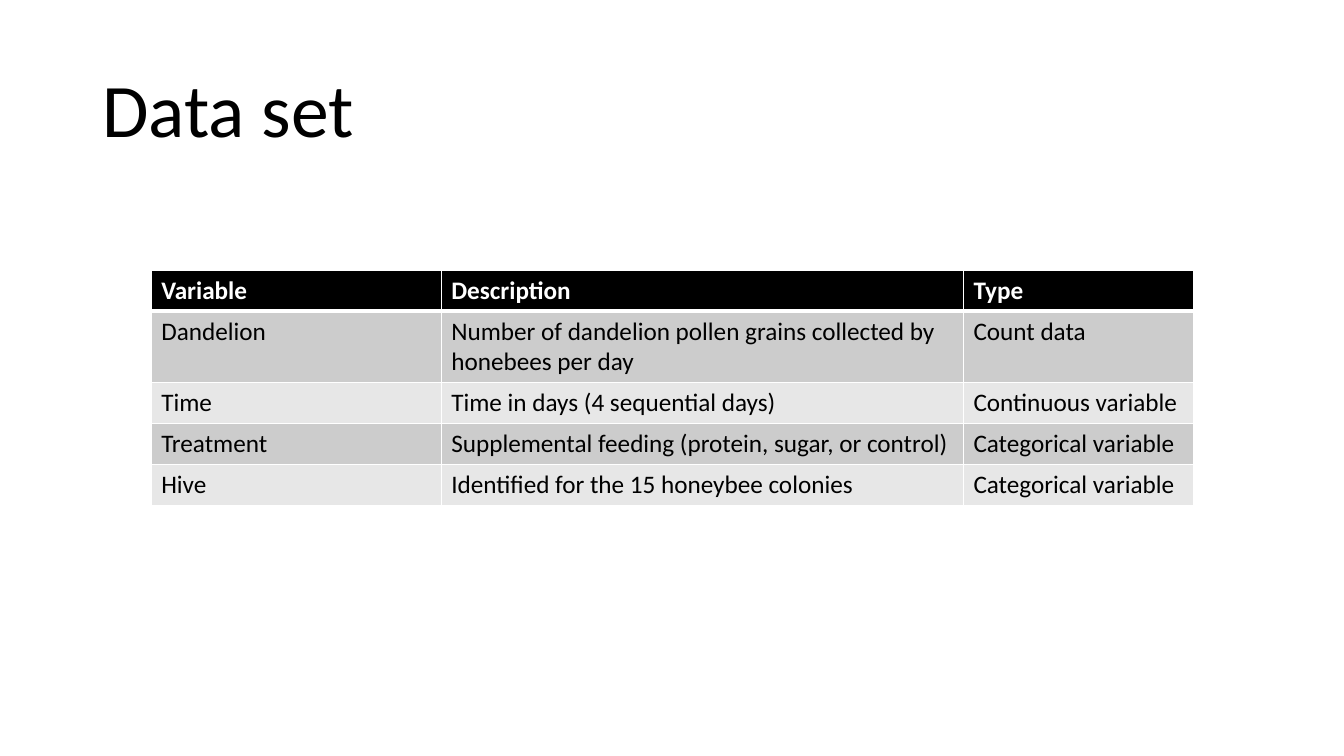
import pptx
import pptx.dml.color
import pptx.enum.text
import pptx.oxml
import pptx.oxml.ns
import pptx.util

Pt = pptx.util.Pt
COLORS = {"ink": "000000", "paper": "FFFFFF", "odd": "CCCCCC", "even": "E7E7E7"}
ROWS = [
    ("Variable", "Description", "Type"),
    ("Dandelion", "Number of dandelion pollen grains collected by honebees per day",
     "Count data"),
    ("Time", "Time in days (4 sequential days)", "Continuous variable"),
    ("Treatment", "Supplemental feeding (protein, sugar, or control)",
     "Categorical variable"),
    ("Hive", "Identified for the 15 honeybee colonies", "Categorical variable"),
]
WIDTHS = (207.2, 373, 164.2)
HEIGHTS = (29.2, 51.2, 29.2, 29.2, 29.2)


def rgb(name):
    return pptx.dml.color.RGBColor.from_string(COLORS[name])


class Page:
    def __init__(self, deck, font):
        self.slide = deck.slides.add_slide(deck.slide_layouts[6])
        self.font = font

    def label(self, para, text, color, **format):
        run = para.add_run()
        run.text = text
        run.font.color.rgb = rgb(color)
        for key, value in {"name": self.font, **format}.items():
            setattr(run.font, key, value)

    def title(self, text, box):
        frame = self.slide.shapes.add_textbox(*map(Pt, box)).text_frame
        frame.word_wrap = True
        frame.vertical_anchor = pptx.enum.text.MSO_ANCHOR.MIDDLE
        para = frame.paragraphs[0]
        para.line_spacing = 0.9
        self.label(para, text, "ink", size=Pt(54))

    def edge(self, cell, top, bottom):
        """Draw white cell borders, with widths in points for top and bottom."""
        props = cell._tc.get_or_add_tcPr()
        sides = {"L": 1, "R": 1, "T": top, "B": bottom}
        for place, (side, width) in enumerate(sides.items()):
            props.insert(place, pptx.oxml.parse_xml(
                f'<a:ln{side} {pptx.oxml.ns.nsdecls("a")} w="{Pt(width)}">'
                f'<a:solidFill><a:srgbClr val="{COLORS["paper"]}"/></a:solidFill>'
                f'</a:ln{side}>'))

    def table(self, rows, left, top, widths, heights):
        size = (sum(widths), sum(heights))
        grid = self.slide.shapes.add_table(
            len(rows), len(widths), *map(Pt, (left, top, *size))).table
        for column, width in zip(grid.columns, widths):
            column.width = Pt(width)
        for i, texts in enumerate(rows):
            grid.rows[i].height = Pt(heights[i])
            head = i == 0
            fill = "ink" if head else ("even", "odd")[i % 2]
            for j, text in enumerate(texts):
                cell = grid.cell(i, j)
                cell.fill.solid()
                cell.fill.fore_color.rgb = rgb(fill)
                self.edge(cell, 3 if i == 1 else 1, 3 if head else 1)
                self.label(cell.text_frame.paragraphs[0], text,
                           "paper" if head else "ink", size=Pt(18), bold=head)


def main():
    deck = pptx.Presentation()
    deck.slide_width, deck.slide_height = Pt(960), Pt(540)
    page = Page(deck, "Calibri")
    page.title("Data set", (66, 28.8, 828, 104.4))
    page.table(ROWS, 108, 193, WIDTHS, HEIGHTS)
    deck.save("out.pptx")


if __name__ == "__main__":
    main()
